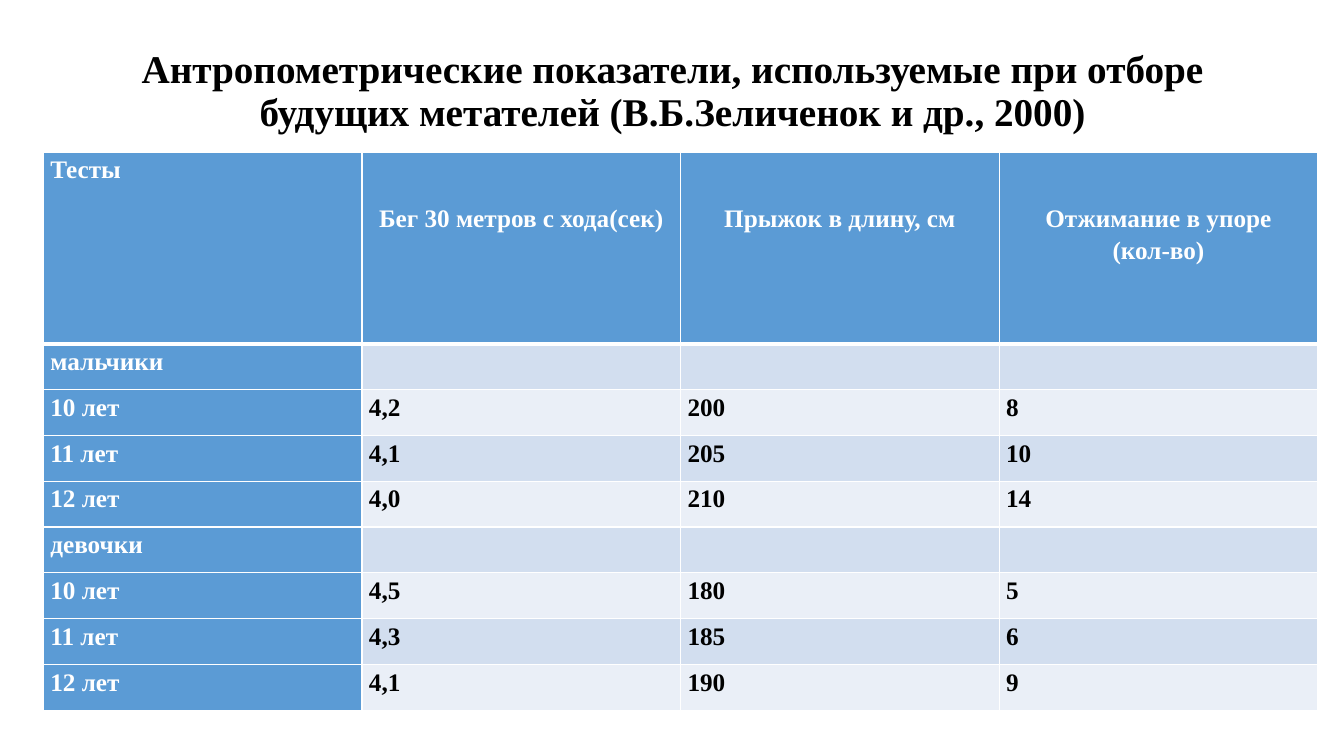
from lxml import etree
from pptx import Presentation
from pptx.dml.color import RGBColor
from pptx.enum import text
from pptx.oxml import ns
from pptx.util import Inches, Pt

FONT = "Times New Roman"
WHITE, BLACK, BLUE = "FFFFFF", "000000", "5B9BD5"
BANDS = ("D2DEEF", "EAEFF7")
TITLE = ("Антропометрические показатели, используемые при отборе "
         "будущих метателей (В.Б.Зеличенок и др., 2000)")
TESTS = ["Тесты", "Бег 30 метров с хода(сек)", "Прыжок в длину, см",
         "Отжимание в упоре\n(кол-во)"]
RESULTS = [
    ["мальчики", "", "", ""],
    ["10 лет", "4,2", "200", "8"],
    ["11 лет", "4,1", "205", "10"],
    ["12 лет", "4,0", "210", "14"],
    ["девочки", "", "", ""],
    ["10 лет", "4,5", "180", "5"],
    ["11 лет", "4,3", "185", "6"],
    ["12 лет", "4,1", "190", "9"],
]


def color(value):
    """Turn a hex string into a colour."""
    return RGBColor.from_string(value)


def format_text(frame, size, ink, spacing, align):
    """Format every paragraph of a text frame."""
    for paragraph in frame.paragraphs:
        paragraph.alignment = align
        paragraph.line_spacing = spacing
        for font in [paragraph.font] + [run.font for run in paragraph.runs]:
            for name, value in {"name": FONT, "size": Pt(size), "bold": True}.items():
                setattr(font, name, value)
            font.color.rgb = color(ink)


def add_borders(cell, widths):
    """Draw white cell borders with a width in points for each side."""
    properties = cell._tc.get_or_add_tcPr()
    for side, width in widths.items():
        line = etree.SubElement(properties, ns.qn(f"a:ln{side}"), w=str(Pt(width)))
        fill = etree.SubElement(line, ns.qn("a:solidFill"))
        etree.SubElement(fill, ns.qn("a:srgbClr"), val=WHITE)


def place_title(slide, left, top, width, height):
    """Place the heading above the table."""
    title = slide.shapes.title
    box = {"left": left, "top": top, "width": width, "height": height}
    for name, value in box.items():
        setattr(title, name, Inches(value))
    frame = title.text_frame
    frame.text = TITLE
    layout = {"word_wrap": True, "auto_size": text.MSO_AUTO_SIZE.NONE,
              "vertical_anchor": text.MSO_ANCHOR.MIDDLE,
              "margin_bottom": Inches(0.47)}
    for name, value in layout.items():
        setattr(frame, name, value)
    format_text(frame, 28, BLACK, 0.9, text.PP_ALIGN.CENTER)


def fill_cell(cell, content, row, column):
    """Write and format one cell according to its place in the table."""
    heading = row == 0 and column > 0
    label = row == 0 or column == 0
    cell.text = content
    bottom = 0.62 - 0.32 * content.count("\n") if heading else 0
    layout = {"margin_left": Inches(0.07), "margin_right": Inches(0.07),
              "margin_top": 0, "margin_bottom": Inches(bottom),
              "vertical_anchor": text.MSO_ANCHOR.MIDDLE if heading else text.MSO_ANCHOR.TOP}
    for name, value in layout.items():
        setattr(cell, name, value)
    add_borders(cell, {"L": 1, "R": 1, "T": 3 if row == 1 else 1,
                       "B": 3 if row == 0 else 1})
    cell.fill.solid()
    cell.fill.fore_color.rgb = color(BLUE if label else BANDS[(row - 1) % 2])
    format_text(cell.text_frame, 18, WHITE if label else BLACK, 1.15,
                text.PP_ALIGN.CENTER if heading else text.PP_ALIGN.LEFT)


def place_results(slide, left, top, width, height, header_height):
    """Place the table of test results."""
    rows = [TESTS] + RESULTS
    table = slide.shapes.add_table(
        len(rows), len(TESTS), Inches(left), Inches(top),
        Inches(width), Inches(height)).table
    table.first_col = True
    for column in table.columns:
        column.width = Inches(width / len(TESTS))
    for index, contents in enumerate(rows):
        body_height = (height - header_height) / len(RESULTS)
        table.rows[index].height = Inches(body_height if index else header_height)
        for column, content in enumerate(contents):
            fill_cell(table.cell(index, column), content, index, column)


def main():
    """Build and save the slide."""
    deck = Presentation()
    deck.slide_width, deck.slide_height = Inches(13.33), Inches(7.5)
    slide = deck.slides.add_slide(deck.slide_layouts[5])
    place_title(slide, 0.92, 0.4, 11.5, 1.45)
    place_results(slide, 0.43, 1.51, 12.64, 5.54, 1.9)
    deck.save("out.pptx")


if __name__ == "__main__":
    main()
